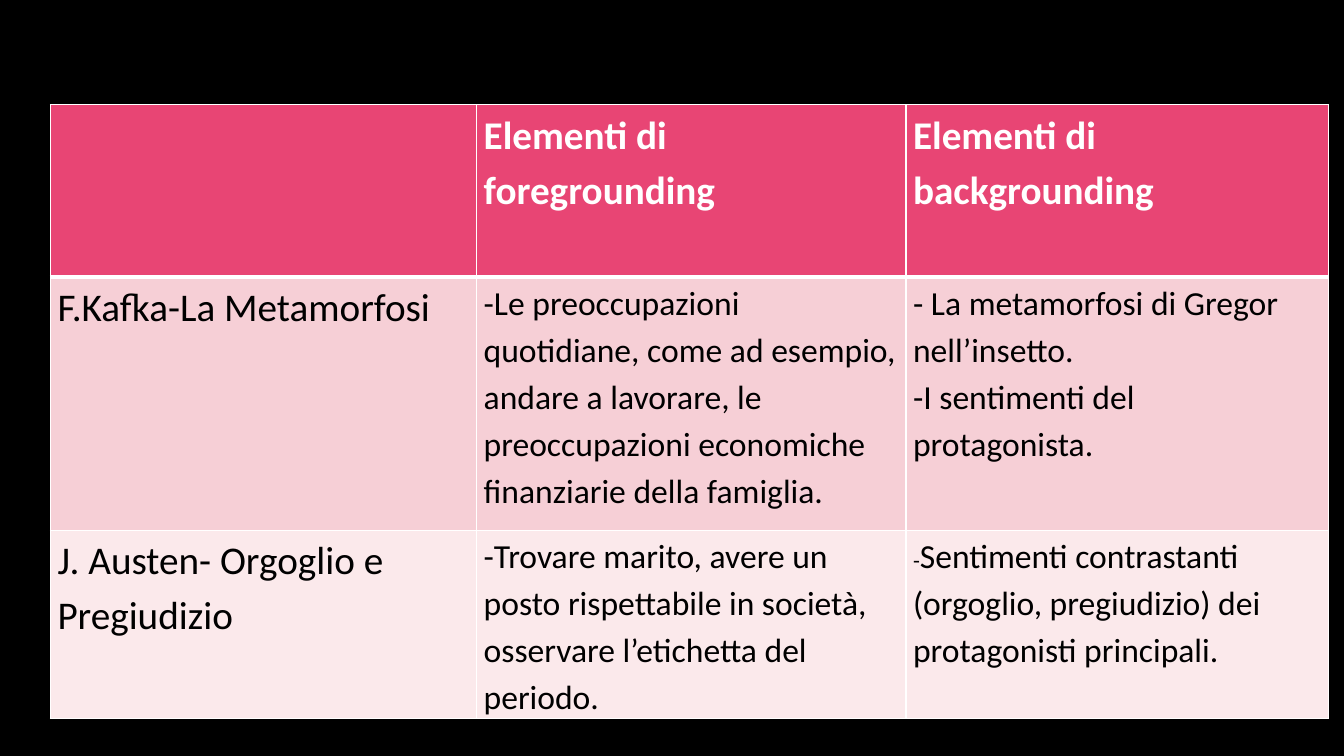
from lxml.etree import SubElement
from pptx import Presentation
from pptx.dml.color import RGBColor as RGB
from pptx.oxml.ns import qn
from pptx.util import Cm, Pt

COLORS = {
    "background": "000000",
    "header": "E84574",
    "kafka": "F6CFD6",
    "austen": "FBE9EB",
    "text": "000000",
    "light": "FFFFFF",
}
FONT = "Calibri"
LABEL_SIZE, BODY_SIZE, DASH_SIZE = 28, 24, 16
COLUMN_WIDTHS = (10.74, 10.82, 10.64)
ROW_HEIGHTS = (4.34, 6.38, 4.27)
ROW_FILLS = ("header", "kafka", "austen")

# Each cell is a list of paragraphs.
COMPARISON = [
    [[], ["Elementi di foregrounding"], ["Elementi di backgrounding"]],
    [
        ["F.Kafka-La Metamorfosi"],
        ["-Le preoccupazioni quotidiane, come ad esempio, andare a lavorare, "
         "le preoccupazioni economiche finanziarie della famiglia."],
        ["- La metamorfosi di Gregor nell’insetto.",
         "-I sentimenti del protagonista."],
    ],
    [
        ["J. Austen- Orgoglio e Pregiudizio"],
        ["-Trovare marito, avere un posto rispettabile in società, "
         "osservare l’etichetta del periodo."],
        ["-"],
    ],
]
CONTRASTS = ("Sentimenti contrastanti (orgoglio, pregiudizio) "
             "dei protagonisti principali.")


class ComparisonSlide:
    def __init__(self, deck):
        self.slide = deck.slides.add_slide(deck.slide_layouts[6])
        background = self.slide.background.fill
        background.solid()
        background.fore_color.rgb = RGB.from_string(COLORS["background"])

    def style_run(self, run, size, color="text", bold=False):
        run.font.name = FONT
        run.font.size = Pt(size)
        run.font.bold = bold
        run.font.color.rgb = RGB.from_string(COLORS[color])

    def border_cell(self, cell, top, bottom):
        properties = cell._tc.get_or_add_tcPr()
        for side, width in (("L", 1), ("R", 1), ("T", top), ("B", bottom)):
            line = SubElement(properties, qn(f"a:ln{side}"), w=str(Pt(width)))
            fill = SubElement(line, qn("a:solidFill"))
            SubElement(fill, qn("a:srgbClr"), val=COLORS["light"])

    def fill_cell(self, cell, paragraphs, fill, size, color, bold):
        cell.margin_left = cell.margin_right = Cm(0.18)
        cell.margin_top = cell.margin_bottom = 0
        cell.fill.solid()
        cell.fill.fore_color.rgb = RGB.from_string(COLORS[fill])
        cell.text_frame.text = "\n".join(paragraphs)
        for paragraph in cell.text_frame.paragraphs:
            paragraph.line_spacing = 1.15
            for run in paragraph.runs:
                self.style_run(run, size, color, bold)

    def add_comparison(self, left, top):
        table = self.slide.shapes.add_table(
            len(ROW_HEIGHTS), len(COLUMN_WIDTHS), Cm(left), Cm(top),
            Cm(sum(COLUMN_WIDTHS)), Cm(sum(ROW_HEIGHTS))).table
        for column, width in zip(table.columns, COLUMN_WIDTHS):
            column.width = Cm(width)
        for r, (height, fill) in enumerate(zip(ROW_HEIGHTS, ROW_FILLS)):
            table.rows[r].height = Cm(height)
            is_header = r == 0
            for c, paragraphs in enumerate(COMPARISON[r]):
                cell = table.cell(r, c)
                self.border_cell(cell, top=3 if r == 1 else 1,
                                 bottom=3 if is_header else 1)
                size = LABEL_SIZE if is_header or c == 0 else BODY_SIZE
                self.fill_cell(cell, paragraphs, fill, size,
                               "light" if is_header else "text", is_header)
        return table

    def add_contrasts(self, cell):
        """Follow the small dash with the full-size sentence."""
        paragraph = cell.text_frame.paragraphs[0]
        self.style_run(paragraph.runs[0], DASH_SIZE)
        sentence = paragraph.add_run()
        sentence.text = CONTRASTS
        self.style_run(sentence, BODY_SIZE)


def main():
    deck = Presentation()
    deck.slide_width, deck.slide_height = Cm(33.87), Cm(19.05)
    slide = ComparisonSlide(deck)
    comparison = slide.add_comparison(left=1.27, top=2.64)
    slide.add_contrasts(comparison.cell(2, 2))
    deck.save("out.pptx")


if __name__ == "__main__":
    main()
